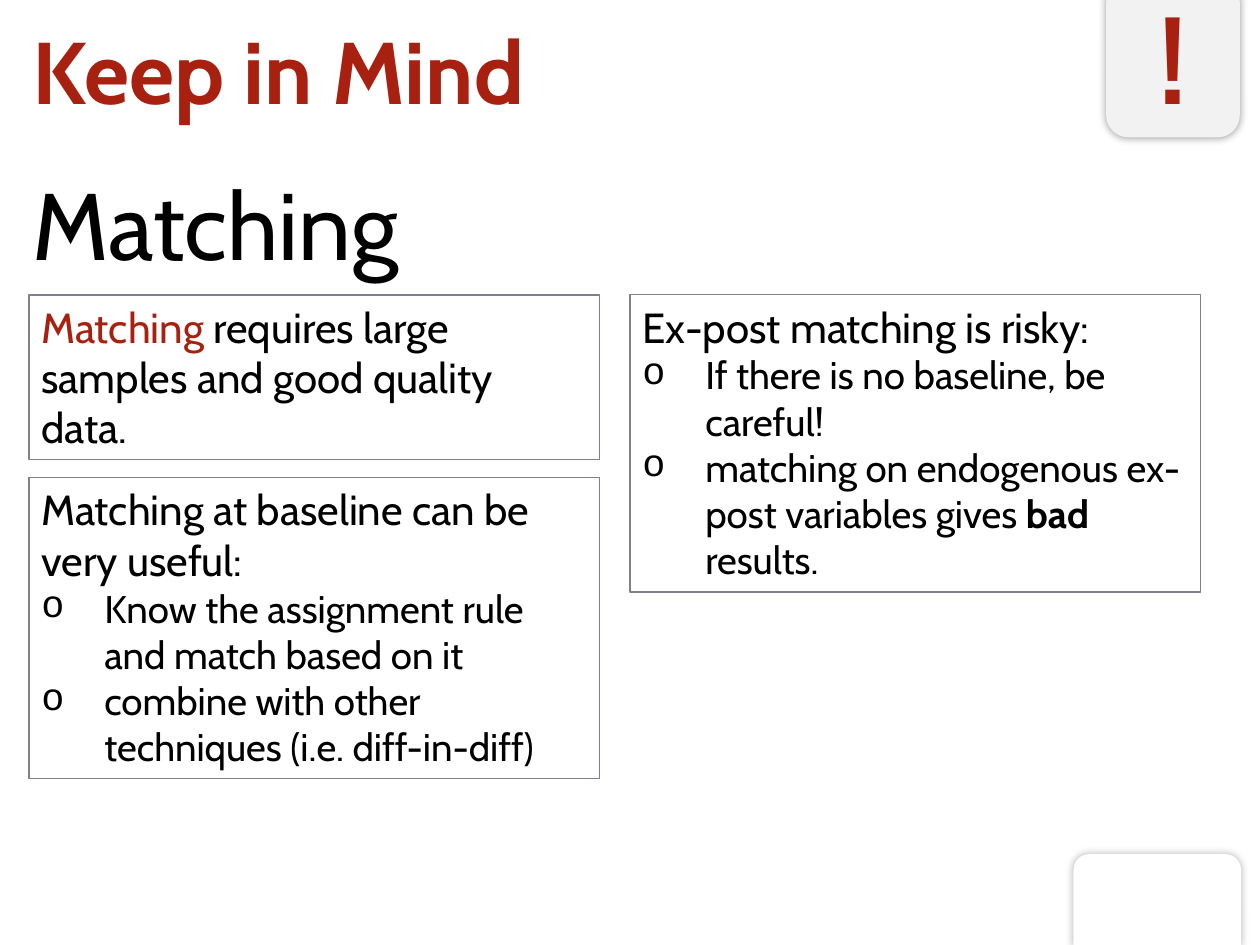
from lxml.etree import SubElement
from pptx import Presentation
from pptx.dml.color import RGBColor
from pptx.enum.shapes import MSO_SHAPE
from pptx.enum.text import MSO_ANCHOR, PP_ALIGN
from pptx.oxml.ns import qn
from pptx.util import Inches, Pt

SLIDE_WIDTH, SLIDE_HEIGHT = Inches(10), Inches(7.5)
COLUMN, ROW = SLIDE_WIDTH / 100, SLIDE_HEIGHT / 75
FONT = "Cabin"
RED = RGBColor(0xA8, 0x20, 0x10)
BLACK = RGBColor(0, 0, 0)
WHITE = RGBColor(0xFF, 0xFF, 0xFF)
PALE_GREY = RGBColor(0xF2, 0xF2, 0xF2)
BORDER_GREY = RGBColor(0x7F, 0x7F, 0x8F)

LEFT_COLUMN, RIGHT_COLUMN, PANEL_WIDTH = 2.3, 50, 45.3
PANELS = [
    ((LEFT_COLUMN, 23.4, PANEL_WIDTH, 13.1),
     [[("Matching", RED, False),
       (" requires large samples and good quality data.", BLACK, False)]]),
    ((LEFT_COLUMN, 37.9, PANEL_WIDTH, 23.9),
     [[("Matching at baseline can be very useful:", BLACK, False)],
      [("Know the assignment rule and match based on it", BLACK, False)],
      [("combine with other techniques (i.e. diff-in-diff)", BLACK, False)]]),
    ((RIGHT_COLUMN, 23.4, PANEL_WIDTH, 23.6),
     [[("Ex-post matching is risky:", BLACK, False)],
      [("If there is no baseline, be careful!", BLACK, False)],
      [("matching on endogenous ex-post variables gives ", BLACK, False),
       ("bad", BLACK, True), (" results.", BLACK, False)]]),
]


def place(box):
    """Turn a box in grid columns and rows into slide lengths."""
    left, top, width, height = box
    return (round(left * COLUMN), round(top * ROW),
            round(width * COLUMN), round(height * ROW))


def style(run, size, color, bold=False):
    """Set the typeface, size, colour and weight of a run."""
    run.font.name = FONT
    run.font.size = Pt(size)
    run.font.color.rgb = color
    run.font.bold = bold


def add_bullet(paragraph):
    """Give a paragraph a hanging circle bullet."""
    properties = paragraph._p.get_or_add_pPr()
    properties.set("marL", str(Inches(0.5)))
    properties.set("indent", str(-Inches(0.5)))
    SubElement(properties, qn("a:buFont"), typeface="Courier New")
    SubElement(properties, qn("a:buChar"), char="o")


def add_tab(slide, box, outline, color, shadow_opacity):
    """Draw a rounded tab with a soft shadow at the slide's edge."""
    tab = slide.shapes.add_shape(outline, *place(box))
    tab.fill.solid()
    tab.fill.fore_color.rgb = color
    tab.line.fill.background()
    tab.shadow.inherit = False
    effects = tab._element.spPr.find(qn("a:effectLst"))
    shadow = SubElement(effects, qn("a:outerShdw"), blurRad=str(Pt(5)),
                        dist="0", dir="0", algn="ctr", rotWithShape="0")
    shade = SubElement(shadow, qn("a:srgbClr"), val=str(BLACK))
    SubElement(shade, qn("a:alpha"), val=str(shadow_opacity * 1000))
    return tab


def add_warning(slide, box):
    """Draw the tab holding the exclamation mark."""
    warning = add_tab(slide, box, MSO_SHAPE.ROUNDED_RECTANGLE, PALE_GREY, 40)
    warning.text_frame.text = "!"
    warning.text_frame.vertical_anchor = MSO_ANCHOR.MIDDLE
    mark = warning.text_frame.paragraphs[0]
    mark.alignment = PP_ALIGN.CENTER
    style(mark.runs[0], 66, RED, True)


def add_title(slide, box):
    """Move and format the title placeholder."""
    title = slide.shapes.title
    title.left, title.top, title.width, title.height = place(box)
    title.text_frame.text = "Keep in Mind"
    title.text_frame.vertical_anchor = MSO_ANCHOR.MIDDLE
    heading = title.text_frame.paragraphs[0]
    heading.alignment = PP_ALIGN.LEFT
    style(heading.runs[0], 50, RED, True)


def add_topic(slide, box):
    """Write the topic beneath the title."""
    topic = slide.shapes.add_textbox(*place(box)).text_frame
    topic.text = "Matching"
    topic.word_wrap = False
    topic.vertical_anchor = MSO_ANCHOR.MIDDLE
    style(topic.paragraphs[0].runs[0], 54, BLACK)


def add_panel(slide, box, lines):
    """Draw a bordered panel with a lead sentence and bulleted points."""
    panel = slide.shapes.add_shape(MSO_SHAPE.RECTANGLE, *place(box))
    panel.fill.background()
    panel.line.color.rgb = BORDER_GREY
    panel.line.width = Pt(0.75)
    panel.shadow.inherit = False
    frame = panel.text_frame
    frame.word_wrap = True
    frame.vertical_anchor = MSO_ANCHOR.TOP
    for index, pieces in enumerate(lines):
        paragraph = frame.add_paragraph() if index else frame.paragraphs[0]
        paragraph.alignment = PP_ALIGN.LEFT
        if index:
            add_bullet(paragraph)
        for words, color, bold in pieces:
            run = paragraph.add_run()
            run.text = words
            style(run, 22 if index else 24, color, bold)


def main():
    """Build the slide and save it."""
    deck = Presentation()
    deck.slide_width, deck.slide_height = SLIDE_WIDTH, SLIDE_HEIGHT
    slide = deck.slides.add_slide(deck.slide_layouts[5])
    add_tab(slide, (85.2, 67.8, 13.3, 7.3),
            MSO_SHAPE.ROUND_2_SAME_RECTANGLE, WHITE, 30)
    add_title(slide, (1.6, 0.8, 83.6, 9.4))
    add_topic(slide, (1.6, 12.6, 33.5, 10.1))
    for box, lines in PANELS:
        add_panel(slide, box, lines)
    add_warning(slide, (87.8, -1.6, 10.6, 12.5))
    deck.save("out.pptx")


if __name__ == "__main__":
    main()
